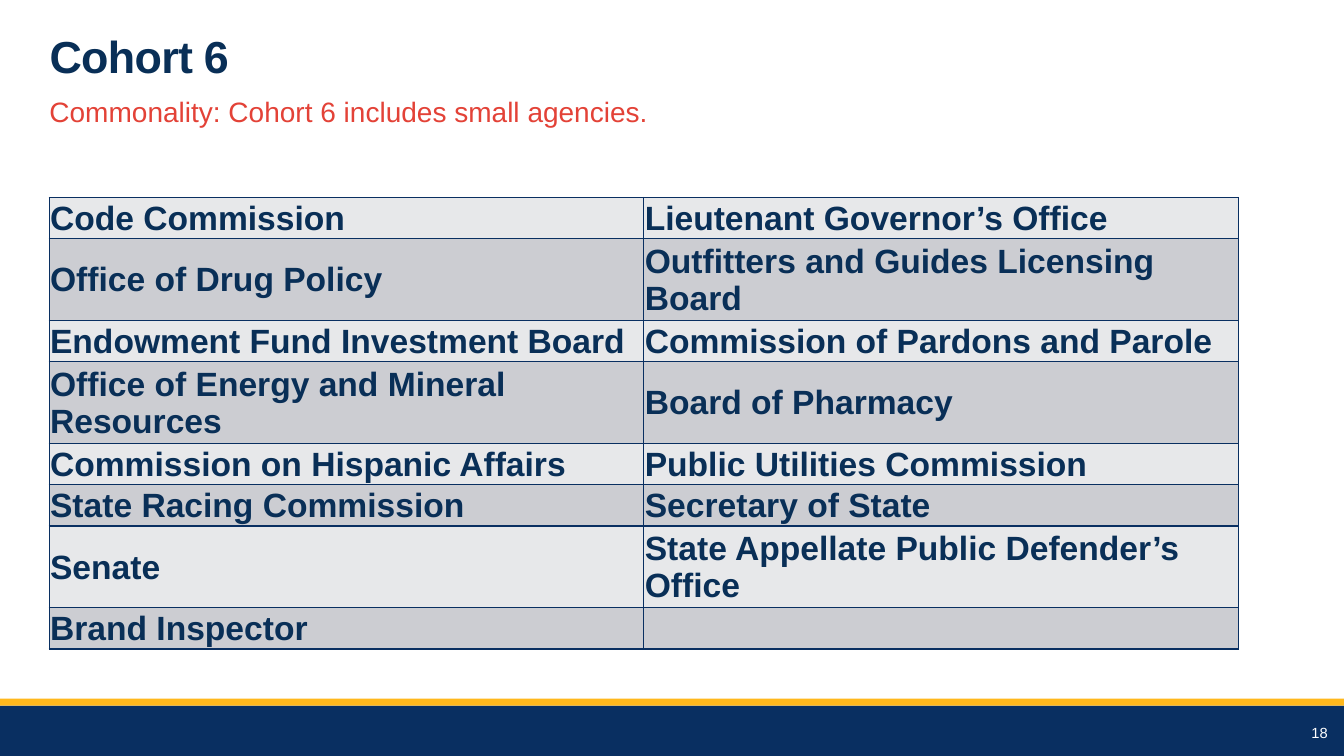
from dataclasses import dataclass

from lxml import etree
from pptx import Presentation
from pptx import util as u
from pptx.dml.color import RGBColor
from pptx.enum import shapes, text
from pptx.oxml import ns

Pt = u.Pt


@dataclass(frozen=True)
class Theme:
    face: str = "Arial"
    navy: str = "092F61"
    ink: str = "092F57"
    gold: str = "FFB81C"
    red: str = "E34237"
    white: str = "FFFFFF"
    bands: tuple = ("E7E8EA", "CCCDD2")
    title_size: float = 32
    subtitle_size: float = 20
    agency_size: float = 24
    number_size: float = 10.5


theme = Theme()


def write(frame, words, size, color, bold=False, **paragraph_format):
    """Fill the first paragraph of a frame with one formatted run."""
    paragraph = frame.paragraphs[0]
    for key, value in paragraph_format.items():
        setattr(paragraph, key, value)
    run = paragraph.add_run()
    run.text = words
    for key, value in {"name": theme.face, "size": Pt(size), "bold": bold}.items():
        setattr(run.font, key, value)
    run.font.color.rgb = RGBColor.from_string(color)
    return run


def add_border(cell, side):
    """Draw one side of a table cell as a 1 pt navy line."""
    line = etree.SubElement(cell._tc.get_or_add_tcPr(), ns.qn(f"a:ln{side}"), w=str(Pt(1)))
    fill = etree.SubElement(line, ns.qn("a:solidFill"))
    etree.SubElement(fill, ns.qn("a:srgbClr"), val=theme.navy)


deck = Presentation()
deck.slide_width, deck.slide_height = Pt(960), Pt(540)
slide = deck.slides.add_slide(deck.slide_layouts[5])

# Footer bands
for top, height, color in ((504, 36, theme.navy), (499, 5, theme.gold)):
    band = slide.shapes.add_shape(
        shapes.MSO_SHAPE.RECTANGLE, 0, Pt(top), Pt(960), Pt(height))
    band.shadow.inherit = False
    band.fill.solid()
    band.fill.fore_color.rgb = RGBColor.from_string(color)
    band.line.fill.background()

# Title
title = slide.shapes.title
title_place = {"left": 28.2, "top": 22.3, "width": 905.8, "height": 40.3}
for key, value in title_place.items():
    setattr(title, key, Pt(value))
title.text_frame.vertical_anchor = text.MSO_ANCHOR.MIDDLE
title.text_frame.word_wrap = True
heading = write(title.text_frame, "Cohort 6", theme.title_size, theme.ink, True,
                alignment=text.PP_ALIGN.LEFT, line_spacing=0.85)
heading.font._element.set("spc", "-50")

# Subtitle
commonality = slide.shapes.add_textbox(Pt(28.2), Pt(62), Pt(863), Pt(31)).text_frame
commonality.word_wrap = True
write(commonality, "Commonality: Cohort 6 includes small agencies.",
      theme.subtitle_size, theme.red, line_spacing=1.07)

# Slide number
page_number = slide.shapes.add_textbox(Pt(852.5), Pt(508.5), Pt(103), Pt(29)).text_frame
page_number.word_wrap = True
page_number.vertical_anchor = text.MSO_ANCHOR.MIDDLE
write(page_number, "18", theme.number_size, theme.white,
      alignment=text.PP_ALIGN.RIGHT)

# Agencies, with the number of text lines in each row
agencies = (
    (1, "Code Commission", "Lieutenant Governor’s Office"),
    (2, "Office of Drug Policy", "Outfitters and Guides Licensing Board"),
    (1, "Endowment Fund Investment Board", "Commission of Pardons and Parole"),
    (2, "Office of Energy and Mineral Resources", "Board of Pharmacy"),
    (1, "Commission on Hispanic Affairs", "Public Utilities Commission"),
    (1, "State Racing Commission", "Secretary of State"),
    (2, "Senate", "State Appellate Public Defender’s Office"),
    (1, "Brand Inspector", ""),
)
row_heights = {1: 29.5, 2: 58.1}
cell_format = {
    "margin_left": Pt(0.7), "margin_right": Pt(0.7),
    "margin_top": Pt(0.7), "margin_bottom": 0,
    "vertical_anchor": text.MSO_ANCHOR.MIDDLE,
}
total_height = sum(row_heights[lines] for lines, *_ in agencies)
roster = slide.shapes.add_table(
    len(agencies), 2, Pt(35.1), Pt(141.1), Pt(849.6), Pt(total_height)).table
roster.first_row = False

for index, (lines, *names) in enumerate(agencies):
    roster.rows[index].height = Pt(row_heights[lines])
    for column, name in enumerate(names):
        cell = roster.cell(index, column)
        for key, value in cell_format.items():
            setattr(cell, key, value)
        for side in "LRTB":
            add_border(cell, side)
        cell.fill.solid()
        cell.fill.fore_color.rgb = RGBColor.from_string(theme.bands[index % 2])
        if name:
            write(cell.text_frame, name, theme.agency_size, theme.ink, True)

deck.save("out.pptx")
